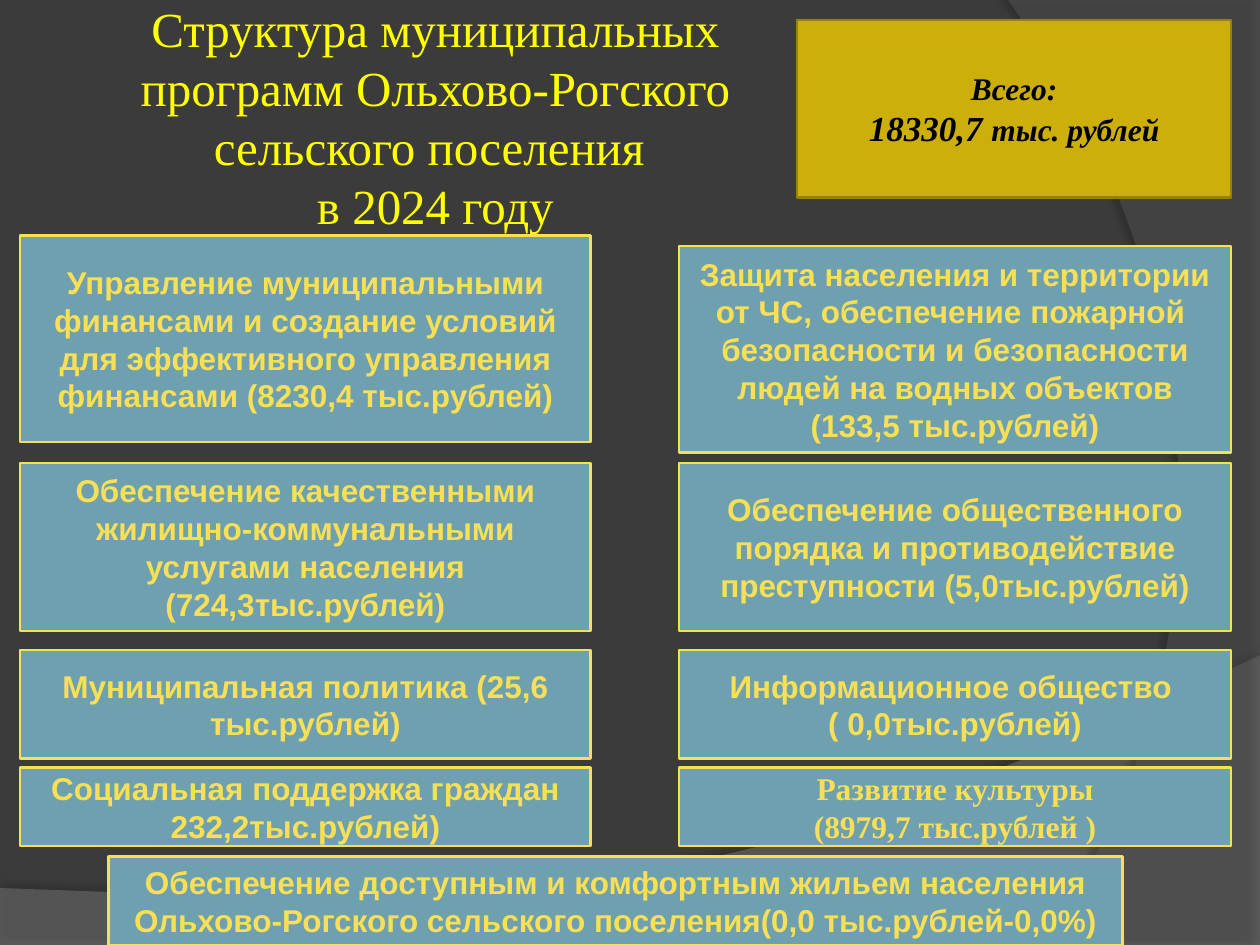
"""Builds the slide on municipal programmes of a rural settlement in 2024."""
from lxml.etree import SubElement
from pptx import Presentation
from pptx.dml.color import RGBColor as RGB
from pptx.enum.shapes import MSO_SHAPE as SHAPE
from pptx.enum.text import MSO_ANCHOR as ANCHOR, PP_ALIGN as ALIGN
from pptx.oxml.ns import qn
from pptx.util import Pt

COLORS = {"bg": "3B3B3B", "title": "FFFF00", "box": "6EA0B0", "accent": "F7DF56",
          "total": "CCAF0A", "total_line": "978107", "black": "000000",
          "wave": "7F7F7F", "arc": "5E5E5E"}
SERIF, SANS = "Times New Roman", "Arial"

TITLE = "Структура муниципальных программ Ольхово-Рогского сельского поселения \vв 2024 году"
TOTAL = [[("Всего:", 18)], [("18330,7 ", 20), ("тыс. рублей", 18)]]
COLUMNS = [(11.5, 326), (388, 315.5)]
ROWS = [(134.5, 118), (264.5, 96), (371.5, 62), (438.5, 45)]
RIGHT_DROP = 6
PROGRAMS = [
    (["Управление муниципальными финансами и создание условий для эффективного "
      "управления финансами (8230,4 тыс.рублей)"],
     ["Защита населения и территории от ЧС, обеспечение пожарной  безопасности и "
      "безопасности людей на водных объектов (133,5 тыс.рублей)"]),
    (["Обеспечение качественными жилищно-коммунальными услугами населения "
      "(724,3тыс.рублей)"],
     ["Обеспечение общественного порядка и противодействие преступности "
      "(5,0тыс.рублей)"]),
    (["Муниципальная политика (25,6 тыс.рублей)"],
     ["Информационное общество ", "( 0,0тыс.рублей)"]),
    (["Социальная поддержка граждан 232,2тыс.рублей)"],
     ["Развитие культуры", "(8979,7 тыс.рублей )"]),
]
HOUSING = ["Обеспечение доступным и комфортным жильем населения Ольхово-Рогского "
           "сельского поселения(0,0 тыс.рублей-0,0%)"]

WAVE_CURVE = [(720, 374.5), (402.5, 525), (281.5, 517.5), (0, 507.5)]
ARC_CURVE = [(591, 540), (673, 445.5), (733, 216), (576, 0)]


def bezier(curve, steps=40):
    points = []
    for i in range(steps + 1):
        t = i / steps
        weights = ((1 - t) ** 3, 3 * t * (1 - t) ** 2, 3 * t * t * (1 - t), t ** 3)
        points.append(tuple(sum(w * c[k] for w, c in zip(weights, curve)) for k in (0, 1)))
    return points


def add_alpha(color, percent):
    SubElement(color, qn("a:alpha"), val=str(percent * 1000))


def add_backdrop(s, points, color, opacity, shade, distance, angle):
    start, *rest = [(Pt(x), Pt(y)) for x, y in points]
    builder = s.shapes.build_freeform(*start)
    builder.add_line_segments(rest, close=True)
    sp = builder.convert_to_shape()
    sp.fill.solid()
    sp.fill.fore_color.rgb = RGB.from_string(COLORS[color])
    sp.line.fill.background()
    sp.shadow.inherit = False
    pr = sp._element.spPr
    add_alpha(pr.find(qn("a:solidFill"))[0], opacity)
    shadow = SubElement(pr.find(qn("a:effectLst")), qn("a:outerShdw"), blurRad=str(Pt(4)),
                        dist=str(Pt(distance)), dir=str(angle * 60000))
    add_alpha(SubElement(shadow, qn("a:srgbClr"), val=COLORS["black"]), shade)


def write(sp, paragraphs, font, color, bold=True, italic=False):
    tf = sp.text_frame
    tf.word_wrap = True
    tf.vertical_anchor = ANCHOR.MIDDLE
    for i, runs in enumerate(paragraphs):
        p = tf.add_paragraph() if i else tf.paragraphs[0]
        p.alignment = ALIGN.CENTER
        for text, size in runs:
            for j, part in enumerate(text.split("\v")):
                if j:
                    p.add_line_break()
                r = p.add_run()
                r.text = part
                r.font.name, r.font.size = font, Pt(size)
                r.font.bold, r.font.italic = bold, italic
                r.font.color.rgb = RGB.from_string(COLORS[color])


def add_box(s, bounds, fill="box", line="accent"):
    sp = s.shapes.add_shape(SHAPE.RECTANGLE, *map(Pt, bounds))
    sp.shadow.inherit = False
    sp.fill.solid()
    sp.fill.fore_color.rgb = RGB.from_string(COLORS[fill])
    sp.line.color.rgb = RGB.from_string(COLORS[line])
    sp.line.width = Pt(1.5)
    return sp


def add_program(s, bounds, lines, font=SANS):
    write(add_box(s, bounds), [[(line, 18)] for line in lines], font, "accent")


def main():
    prs = Presentation()
    prs.slide_width, prs.slide_height = Pt(720), Pt(540)
    s = prs.slides.add_slide(prs.slide_layouts[6])
    s.background.fill.solid()
    s.background.fill.fore_color.rgb = RGB.from_string(COLORS["bg"])
    add_backdrop(s, [(0, 540), (720, 540)] + bezier(WAVE_CURVE), "wave", 45, 35, 3.5, 270)
    add_backdrop(s, [(720, 0), (720, 540)] + bezier(ARC_CURVE), "arc", 40, 45, 4, 180)

    title = s.shapes.add_textbox(Pt(36), Pt(21.5), Pt(425.5), Pt(90))
    tf = title.text_frame
    tf.margin_left = tf.margin_right = tf.margin_top = tf.margin_bottom = Pt(3.6)
    write(title, [[(TITLE, 28)]], SERIF, "title", bold=False)

    total = add_box(s, (455.5, 11.5, 248, 101.5), "total", "total_line")
    write(total, TOTAL, SERIF, "black", italic=True)

    for row, ((top, height), pair) in enumerate(zip(ROWS, PROGRAMS)):
        for col, ((left, width), lines) in enumerate(zip(COLUMNS, pair)):
            drop = RIGHT_DROP if (row, col) == (0, 1) else 0
            font = SERIF if (row, col) == (3, 1) else SANS
            add_program(s, (left, top + drop, width, height), lines, font)
    add_program(s, (62, 489.5, 579.5, 50.5), HOUSING)
    prs.save("out.pptx")


if __name__ == "__main__":
    main()
